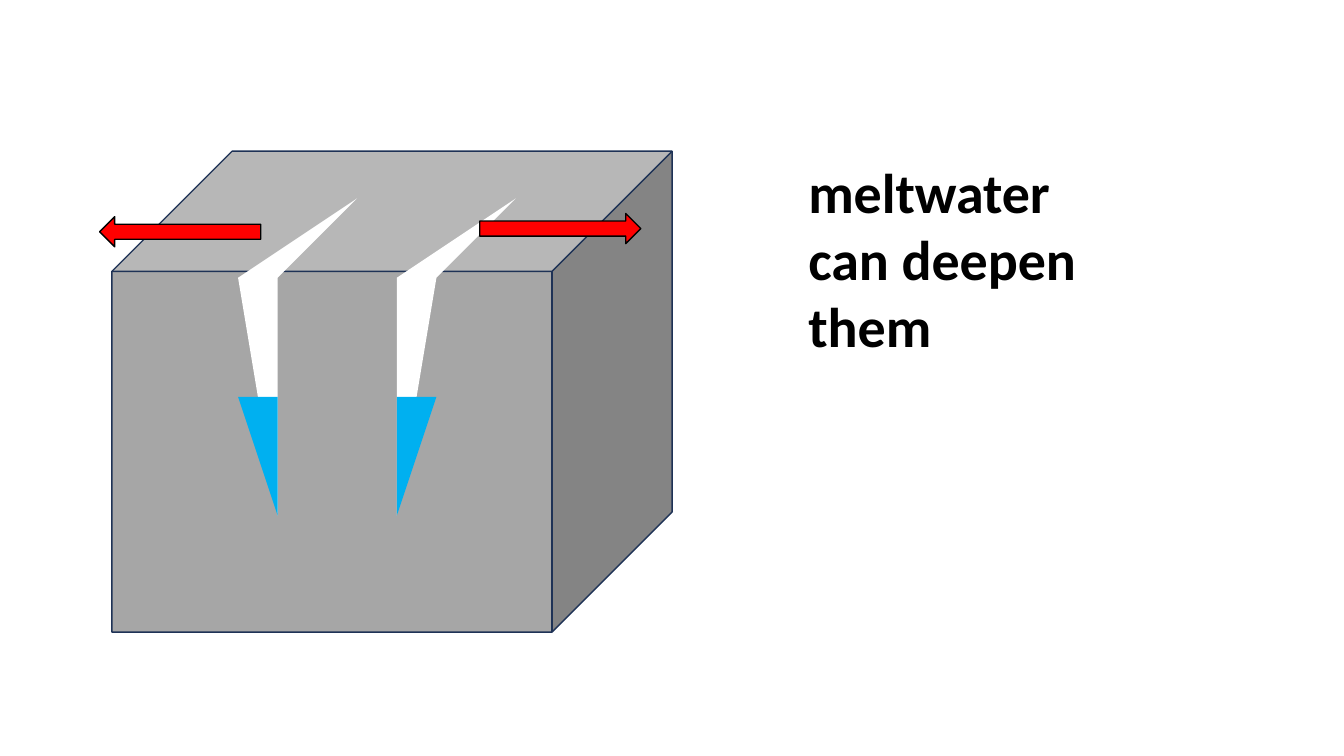
from dataclasses import dataclass

from pptx import Presentation
from pptx.dml.color import RGBColor as Rgb
from pptx.enum.shapes import MSO_SHAPE as Kind
from pptx.enum.text import MSO_AUTO_SIZE as Fit
from pptx.shapes.autoshape import Shape
from pptx.shapes.shapetree import SlideShapes as Tree
from pptx.util import Cm, Pt

HUES = {
    "ice": "A6A6A6",
    "edge": "1E3256",
    "gap": "FFFFFF",
    "water": "00B0F0",
    "pull": "FF0000",
    "ink": "000000",
}
Point = tuple[float, float]


@dataclass
class Crack:
    left: float
    tip: float
    level: float
    depth: float


@dataclass
class Solid:
    kind: Kind
    left: float
    top: float
    width: float
    height: float
    fill: str
    line: str
    turn: float = 0


CRACKS = [
    Crack(9.86, 13.41, 10.24, 13.26),
    Crack(6.22, 13.13, 10.12, 13.15),
]
BLOCK = Solid(Kind.CUBE, 2.82, 3.81, 14.12, 12.12, "ice", "edge")
PULLS = [
    Solid(Kind.RIGHT_ARROW, 12.09, 5.38, 4.06, 0.76, "pull", "ink"),
    Solid(Kind.RIGHT_ARROW, 2.51, 5.46, 4.06, 0.76, "pull", "ink", 180),
]


def hue(name: str) -> Rgb:
    return Rgb.from_string(HUES[name])


def paint(shape: Shape, fill: str) -> None:
    shape.shadow.inherit = False
    shape.fill.solid()
    shape.fill.fore_color.rgb = hue(fill)


def add_solid(tree: Tree, part: Solid) -> None:
    shape = tree.add_shape(
        part.kind, Cm(part.left), Cm(part.top), Cm(part.width), Cm(part.height)
    )
    paint(shape, part.fill)
    shape.line.color.rgb = hue(part.line)
    shape.line.width = Pt(1)
    shape.rotation = part.turn


def add_wedge(tree: Tree, left: float, points: list[Point], fill: str) -> None:
    first, *rest = [(left + x, y) for x, y in points]
    pen = tree.build_freeform(*first, scale=Cm(1))
    pen.add_line_segments(rest, close=True)
    shape = pen.convert_to_shape()
    paint(shape, fill)
    shape.line.fill.background()


def add_crack(tree: Tree, crack: Crack) -> None:
    front = [(0, 6.83), (0.9, 6.83), (0.5, crack.tip)]
    top = [(0.03, 6.88), (2.65, 4.55), (0.83, 6.91)]
    pool = [(0.25, crack.level), (0.67, crack.level), (0.52, crack.depth)]
    for points, fill in ((front, "gap"), (top, "gap"), (pool, "water")):
        add_wedge(tree, crack.left, points, fill)


def add_label(tree: Tree, lines: list[str]) -> None:
    frame = tree.add_textbox(Cm(20.12), Cm(3.84), Cm(10.44), Cm(5.38)).text_frame
    frame.word_wrap = True
    frame.auto_size = Fit.SHAPE_TO_FIT_TEXT
    frame.text = "\n".join(lines)
    for para in frame.paragraphs:
        para.font.name = "Calibri"
        para.font.size = Pt(40)
        para.font.bold = True
        para.font.color.rgb = hue("ink")


def main() -> None:
    deck = Presentation()
    deck.slide_width, deck.slide_height = Cm(33.87), Cm(19.05)
    tree = deck.slides.add_slide(deck.slide_layouts[6]).shapes
    add_solid(tree, BLOCK)
    for crack in CRACKS:
        add_crack(tree, crack)
    for pull in PULLS:
        add_solid(tree, pull)
    add_label(tree, ["meltwater", "can deepen them"])
    deck.save("out.pptx")


if __name__ == "__main__":
    main()
